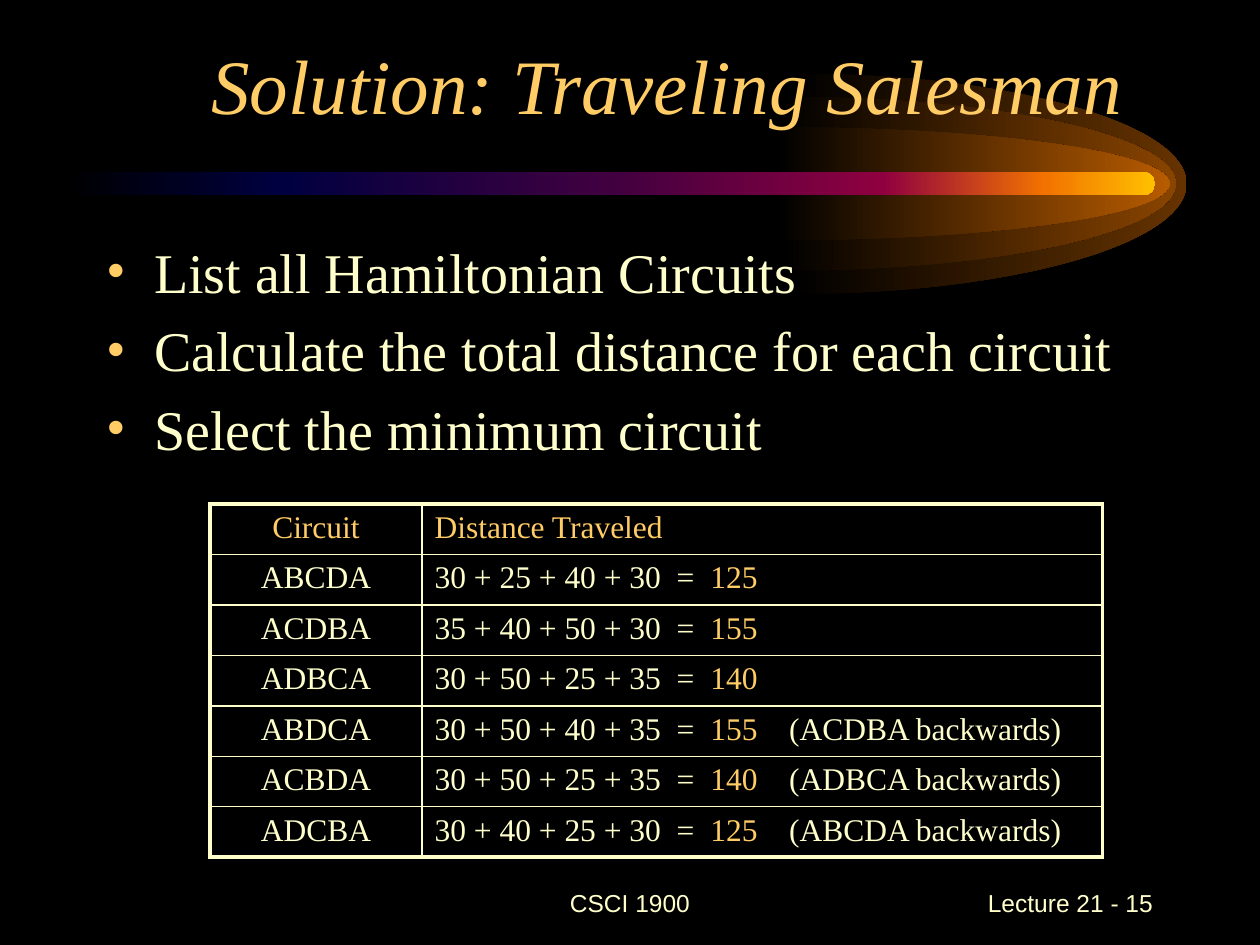
"""Build the travelling salesman solution slide on a grid of 120 by 90 cells."""
import dataclasses

import lxml.etree
import pptx
import pptx.dml.color
import pptx.enum.shapes
import pptx.enum.text
import pptx.oxml.ns
import pptx.util


@dataclasses.dataclass(frozen=True)
class Theme:
    back: str = "000000"
    text: str = "FFFFCC"
    gold: str = "FFCC66"
    serif: str = "Times New Roman"
    sans: str = "Arial"
    title: int = 44
    body: int = 32
    grid: int = 18
    foot: int = 14
    thick: float = 2.25
    thin: float = 1
    glow: tuple = ("663300", "894400", "B75B00")
    beam: tuple = ((0, "000000"), (20, "000040"), (50, "400040"),
                   (75, "8F0040"), (90, "F27300"), (100, "FFBF00"))


theme = Theme()
qn = pptx.oxml.ns.qn
rgb = pptx.dml.color.RGBColor.from_string
align = pptx.enum.text.PP_ALIGN
anchor = pptx.enum.text.MSO_ANCHOR
sub = lxml.etree.SubElement

deck = pptx.Presentation()
deck.slide_width = pptx.util.Inches(10)
deck.slide_height = pptx.util.Inches(7.5)
cell = deck.slide_width / 120
slide = deck.slides.add_slide(deck.slide_layouts[6])
slide.background.fill.solid()
slide.background.fill.fore_color.rgb = rgb(theme.back)


def paint(shape, stops):
    shape.shadow.inherit = False
    shape.line.fill.background()
    shape.fill.gradient()
    shape.fill.gradient_angle = 0
    ramp = shape._element.spPr.find(qn("a:gradFill")).find(qn("a:gsLst"))
    ramp.clear()
    for share, tone in stops:
        stop = sub(ramp, qn("a:gs"), pos=str(share * 1000))
        sub(stop, qn("a:srgbClr"), val=tone)


def write(para, side, size, face, runs, slant=False):
    para.alignment = side
    for words, tone in runs:
        run = para.add_run()
        run.text = words
        run.font.size = pptx.util.Pt(size)
        run.font.name = face
        run.font.italic = slant
        run.font.color.rgb = rgb(tone)


mid = 17.5
reach = 37.5
bend = 0.55
arc = ((0, -1), (bend, -1), (1, -bend), (1, 0), (1, bend), (bend, 1), (0, 1))
for start, rise, tone in zip((75.5, 74.5, 73.9), (10.5, 8.3, 5.4), theme.glow):
    curve = [(round((start + reach * x) * cell), round((mid + rise * y) * cell))
             for x, y in arc]
    pen = slide.shapes.build_freeform(*curve[0])
    pen.add_line_segments(curve[1:], close=True)
    flare = pen.convert_to_shape()
    lines = list(flare._element.iter(qn("a:lnTo")))
    for first in (0, 3):
        lines[first].tag = qn("a:cubicBezTo")
        for line in lines[first + 1:first + 3]:
            lines[first].append(line[0])
            line.getparent().remove(line)
    paint(flare, ((0, theme.back), (100, tone)))

place = [round(part * cell) for part in (6, 16.4, 104, 2.2)]
beam = slide.shapes.add_shape(pptx.enum.shapes.MSO_SHAPE.ROUNDED_RECTANGLE, *place)
beam.adjustments[0] = 0.5
paint(beam, theme.beam)

blocks = (
    ((41, 83, 38, 6), anchor.MIDDLE, align.CENTER, theme.foot, theme.sans,
     theme.text, ("CSCI 1900",)),
    ((86, 83, 25, 6), anchor.MIDDLE, align.RIGHT, theme.foot, theme.sans,
     theme.text, (" Lecture 21 - 15",)),
    ((8, 3, 102, 10), anchor.BOTTOM, align.RIGHT, theme.title, theme.serif,
     theme.gold, ("Solution: Traveling Salesman ",)),
    ((9, 22, 102, 59), anchor.TOP, align.LEFT, theme.body, theme.serif,
     theme.text, ("List all Hamiltonian Circuits",
                  "Calculate the total distance for each circuit",
                  "Select the minimum circuit")),
)
for area, hold, side, size, face, tone, lines in blocks:
    frame = slide.shapes.add_textbox(*[round(part * cell) for part in area]).text_frame
    frame.word_wrap = True
    frame.vertical_anchor = hold
    for index, line in enumerate(lines):
        para = frame.add_paragraph() if index else frame.paragraphs[0]
        write(para, side, size, face, [(line, tone)], size == theme.title)
        if size == theme.body:
            para.space_before = pptx.util.Pt(size / 5)
            props = para._p.get_or_add_pPr()
            inset = round(4.5 * cell)
            props.set("marL", str(inset))
            props.set("indent", str(-inset))
            sub(sub(props, qn("a:buClr")), qn("a:srgbClr"), val=theme.gold)
            sub(props, qn("a:buFont"), typeface=face)
            sub(props, qn("a:buChar"), char="•")

tours = (
    ("ABCDA", "30 + 25 + 40 + 30", "125", ""),
    ("ACDBA", "35 + 40 + 50 + 30", "155", ""),
    ("ADBCA", "30 + 50 + 25 + 35", "140", ""),
    ("ABDCA", "30 + 50 + 40 + 35", "155", "ACDBA"),
    ("ACBDA", "30 + 50 + 25 + 35", "140", "ADBCA"),
    ("ADCBA", "30 + 40 + 25 + 30", "125", "ABCDA"),
)
rows = [([("Circuit", theme.gold)], [("Distance Traveled", theme.gold)])]
for tour, terms, total, twin in tours:
    runs = [(terms + "  =  ", theme.text), (total, theme.gold)]
    if twin:
        runs.append((f"    ({twin} backwards)", theme.text))
    rows.append(([(tour, theme.text)], runs))

place = [round(part * cell) for part in (20, 48, 85, 4.8 * len(rows))]
table = slide.shapes.add_table(len(rows), 2, *place).table
table.first_row = table.horz_banding = False
for col, width in zip(table.columns, (20.2, 64.8)):
    col.width = round(width * cell)
for down, row in enumerate(rows):
    table.rows[down].height = round(4.8 * cell)
    for across, runs in enumerate(row):
        box = table.cell(down, across)
        box.fill.background()
        side = align.LEFT if across else align.CENTER
        write(box.text_frame.paragraphs[0], side, theme.grid, theme.serif, runs)
        props = box._tc.get_or_add_tcPr()
        edges = (("L", across == 0), ("R", across == 1),
                 ("T", down == 0), ("B", down == len(rows) - 1))
        for order, (edge, outer) in enumerate(edges):
            width = pptx.util.Pt(theme.thick if outer else theme.thin)
            rule = sub(props, qn("a:ln" + edge), w=str(width))
            sub(sub(rule, qn("a:solidFill")), qn("a:srgbClr"), val=theme.text)
            props.insert(order, rule)

deck.save("out.pptx")
